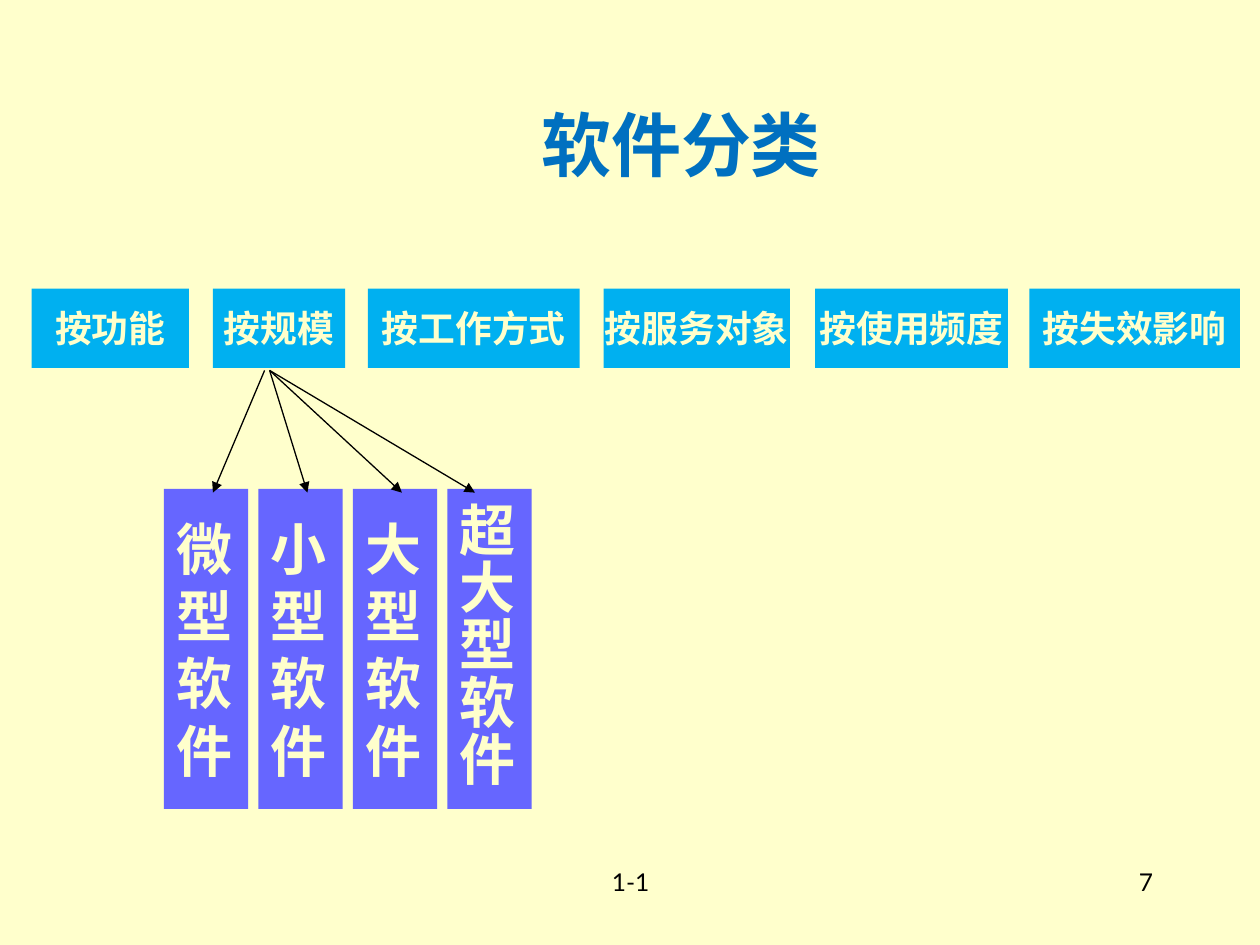
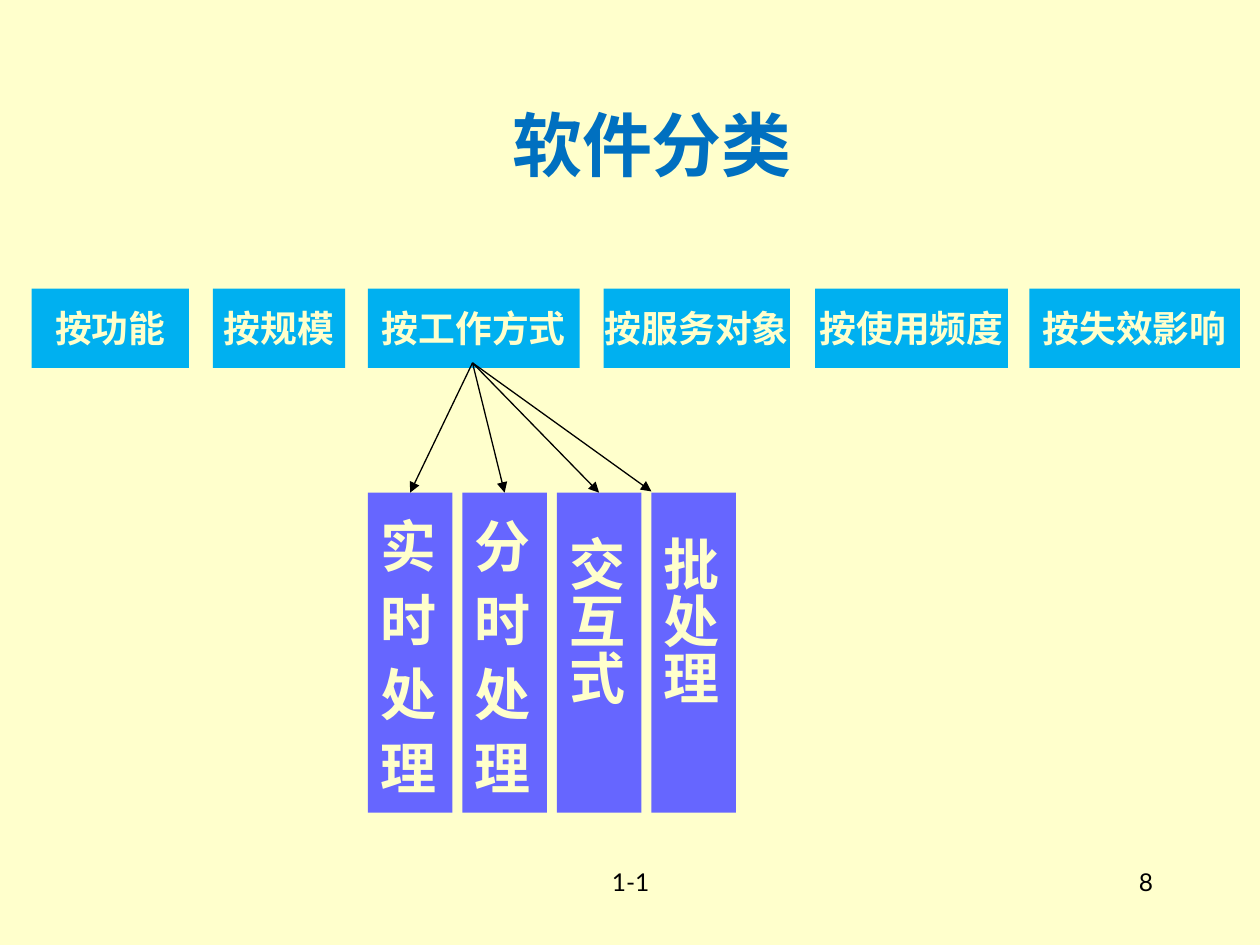
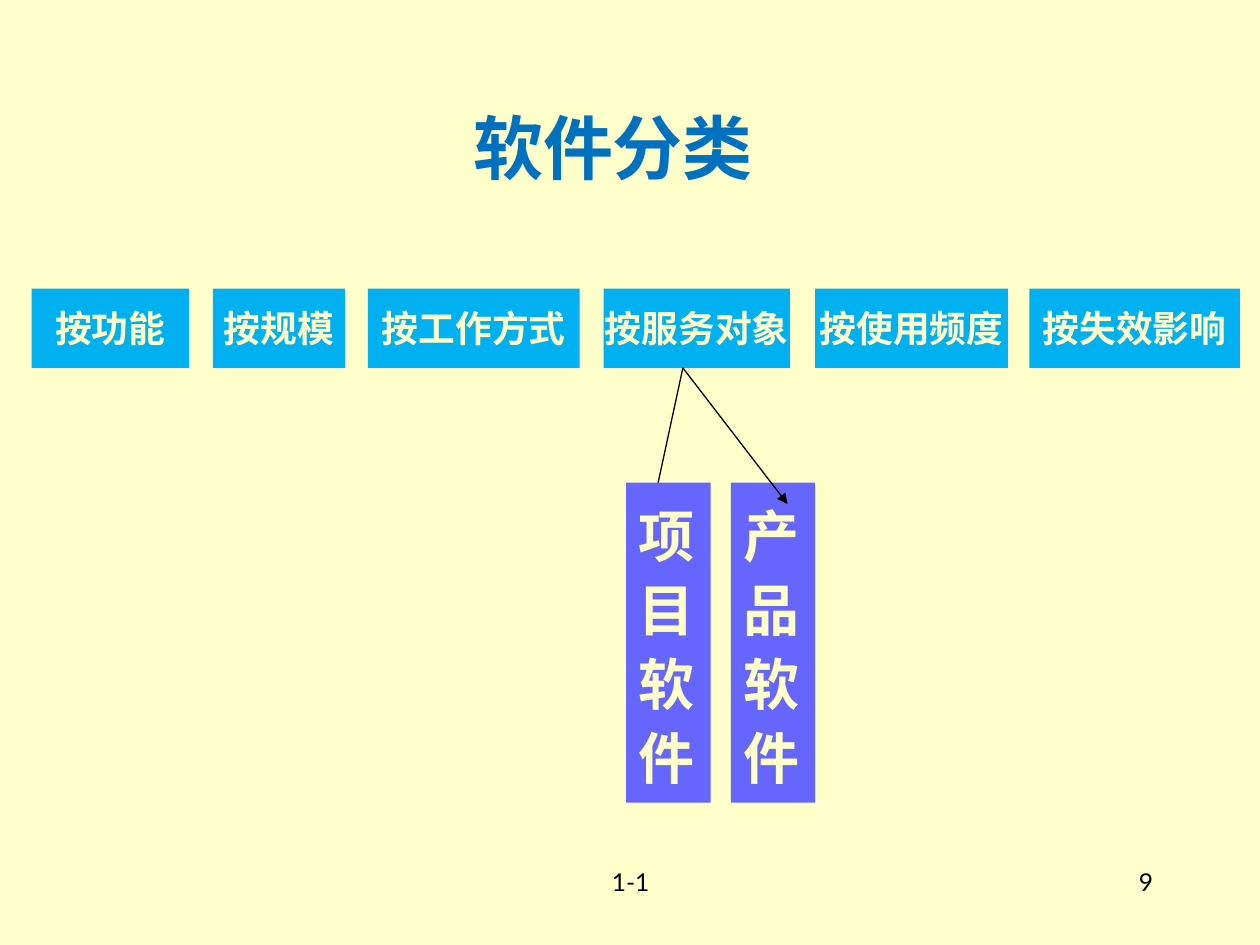
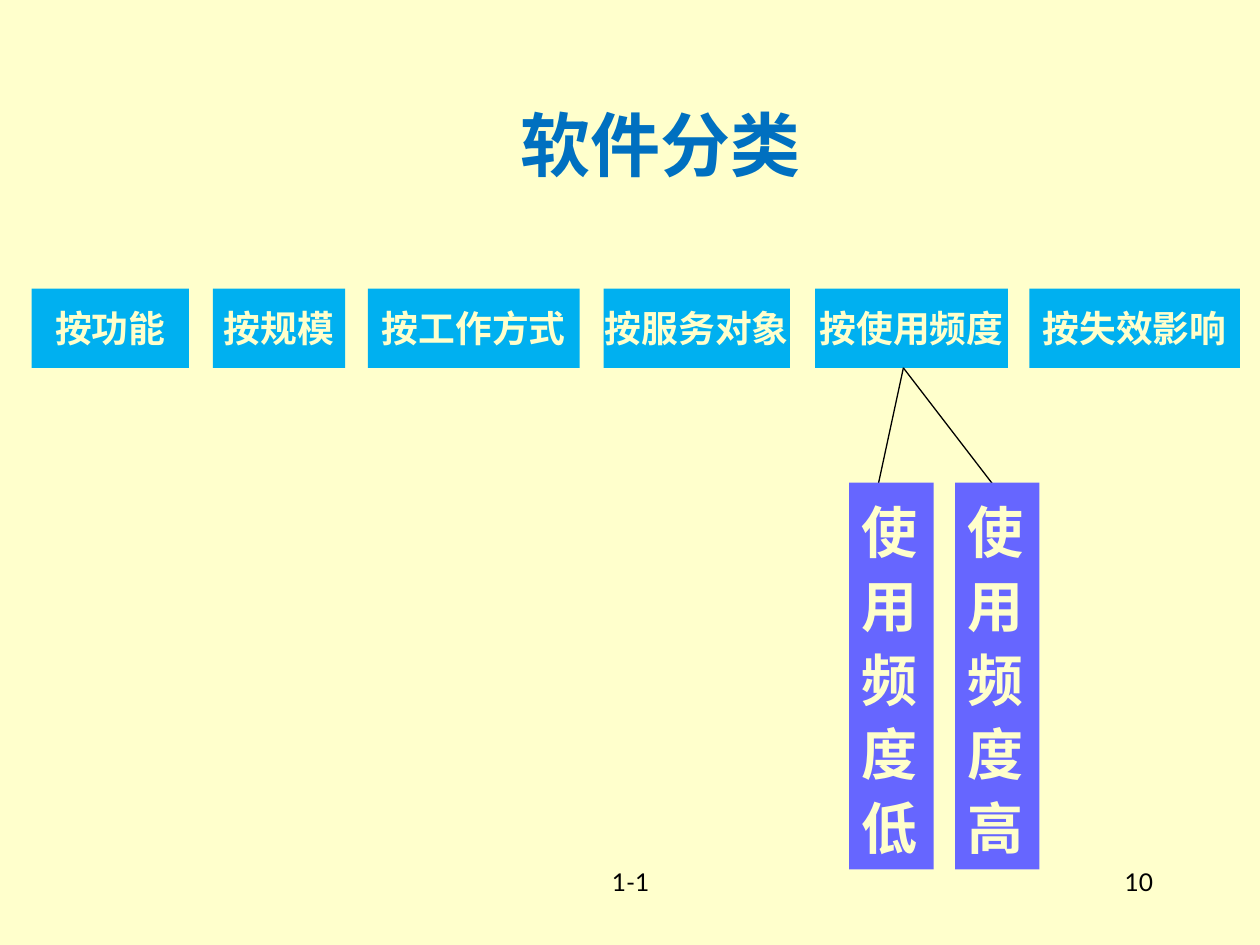
from lxml import etree
from pptx import Presentation
from pptx.dml.color import RGBColor
from pptx.enum.shapes import MSO_CONNECTOR, MSO_SHAPE
from pptx.enum.text import MSO_ANCHOR, PP_ALIGN
from pptx.oxml.ns import qn
from pptx.util import Inches, Pt

# Enum members
RECTANGLE = MSO_SHAPE.RECTANGLE
STRAIGHT = MSO_CONNECTOR.STRAIGHT
MIDDLE, TOP = MSO_ANCHOR.MIDDLE, MSO_ANCHOR.TOP
LEFT, CENTER, RIGHT = PP_ALIGN.LEFT, PP_ALIGN.CENTER, PP_ALIGN.RIGHT
TOP_SIDE = 0

# Colours
CREAM = RGBColor(0xFF, 0xFF, 0xCC)
SKY = RGBColor(0x00, 0xB0, 0xF0)
VIOLET = RGBColor(0x66, 0x66, 0xFF)
TITLE_BLUE = RGBColor(0x00, 0x70, 0xC0)
BLACK = RGBColor(0x00, 0x00, 0x00)

# Text formats
EAST_ASIAN_FONT = "Lato"
TITLE_FONT = {"name": "Noto Sans CJK SC", "size": Pt(40), "bold": True}
CATEGORY_FONT = {"name": "Noto Sans CJK SC", "size": Pt(21), "bold": True}
KIND_FONT = {"name": "Times New Roman", "size": Pt(32), "bold": True}
FOOTER_FONT = {"name": "Lato", "size": Pt(14), "bold": False}

presentation = Presentation()
presentation.slide_width, presentation.slide_height = Inches(10), Inches(7.5)
presentation.slide_master.background.fill.solid()
presentation.slide_master.background.fill.fore_color.rgb = CREAM

# Grid: 10 columns by 7.5 rows
COLUMN = presentation.slide_width / 10
ROW = presentation.slide_height / 7.5

CATEGORY_TOP, CATEGORY_HEIGHT = 2.29, 0.63
CATEGORIES = [  # text, left, width
    ("按功能", 0.25, 1.25),
    ("按规模", 1.69, 1.05),
    ("按工作方式", 2.92, 1.68),
    ("按服务对象", 4.79, 1.48),
    ("按使用频度", 6.47, 1.53),
    ("按失效影响", 8.17, 1.67),
]
KIND_WIDTH = 0.67
SHORT_KIND_INSET = 0.48  # lifts three-character kinds above the middle

# kinds: text and line spacing; in_front: how many kinds cover the arrows
SLIDES = [
    {
        "title": (2.69, 0.76, 5.43, 0.71),
        "left": 1.3, "top": 3.88, "height": 2.54, "pitch": 0.75,
        "kinds": [("微型软件", 1), ("小型软件", 1), ("大型软件", 1), ("超大型软件", 0.85)],
        "in_front": 0,
        "arrows": [(2.1, 2.94, 1.69, 3.91), (2.14, 2.94, 2.44, 3.91),
                   (2.14, 2.94, 3.19, 3.91), (2.14, 2.94, 3.77, 3.91)],
    },
    {
        "title": (3.11, 0.76, 4.13, 0.77),
        "left": 2.92, "top": 3.91, "height": 2.54, "pitch": 0.75,
        "kinds": [("实时处理", 1.1), ("分时处理", 1.1), ("交互式", 0.85), ("批处理", 0.85)],
        "in_front": 0,
        "arrows": [(3.75, 2.88, x, 3.9) for x in (3.25, 4, 4.75, 5.17)],
    },
    {
        "title": (2.8, 0.78, 4.13, 0.77),
        "left": 4.97, "top": 3.83, "height": 2.54, "pitch": 0.83,
        "kinds": [("项目软件", 1.1), ("产品软件", 1.1)],
        "in_front": 1,
        "arrows": [(5.42, 2.92, 5.17, 4.08), (5.42, 2.92, 6.25, 4)],
    },
    {
        "title": (2.48, 0.76, 5.52, 0.77),
        "left": 6.74, "top": 3.83, "height": 3.07, "pitch": 0.84,
        "kinds": [("使用频度低", 1.1), ("使用频度高", 1.1)],
        "in_front": 2,
        "arrows": [(7.17, 2.92, 6.92, 4.08), (7.17, 2.92, 8, 4)],
    },
]


def add_text(slide, box, lines, font, color, align, fill=None, spacing=None):
    """Add a text box, or a filled rectangle with centred text."""
    left, top, width, height = box
    place = [int(left * COLUMN), int(top * ROW), int(width * COLUMN), int(height * ROW)]
    if fill is None:
        shape = slide.shapes.add_textbox(*place)
    else:
        shape = slide.shapes.add_shape(RECTANGLE, *place)
        shape.shadow.inherit = False
        shape.fill.solid()
        shape.fill.fore_color.rgb = fill
        shape.line.fill.background()
    frame = shape.text_frame
    frame.word_wrap = fill is None
    frame.vertical_anchor = TOP if fill is None else MIDDLE
    for index, line in enumerate(lines):
        paragraph = frame.add_paragraph() if index else frame.paragraphs[0]
        paragraph.alignment = align
        paragraph.line_spacing = spacing
        run = paragraph.add_run()
        run.text = line
        for attribute, value in font.items():
            setattr(run.font, attribute, value)
        run.font.color.rgb = color
        east_asian = etree.SubElement(run._r.get_or_add_rPr(), qn("a:ea"))
        east_asian.set("typeface", EAST_ASIAN_FONT)
    return shape


def add_kinds(slide, content, indexes):
    """Add upright boxes, one character a line; return them by centre."""
    boxes = {}
    for index in indexes:
        text, spacing = content["kinds"][index]
        left = content["left"] + index * content["pitch"]
        box = (left, content["top"], KIND_WIDTH, content["height"])
        shape = add_text(slide, box, text, KIND_FONT, CREAM, LEFT, VIOLET, spacing)
        if len(text) == 3:
            shape.text_frame.margin_bottom = int(SHORT_KIND_INSET * ROW)
        boxes[left + KIND_WIDTH / 2] = shape
    return boxes


for number, content in enumerate(SLIDES, start=7):
    slide = presentation.slides.add_slide(presentation.slide_layouts[6])

    # Footer and slide number
    add_text(slide, (3.42, 6.83, 3.17, 0.5), ["1-1"], FOOTER_FONT, BLACK, CENTER)
    add_text(slide, (7.17, 6.83, 2.08, 0.5), [str(number)], FOOTER_FONT, BLACK, RIGHT)

    # Row of categories
    for text, left, width in CATEGORIES:
        box = (left, CATEGORY_TOP, width, CATEGORY_HEIGHT)
        add_text(slide, box, [text], CATEGORY_FONT, CREAM, CENTER, SKY)

    # Kinds behind the arrows
    in_front = content["in_front"]
    kinds = add_kinds(slide, content, range(in_front, len(content["kinds"])))

    # Arrows from the category to its kinds
    for start_x, start_y, end_x, end_y in content["arrows"]:
        arrow = slide.shapes.add_connector(
            STRAIGHT, int(start_x * COLUMN), int(start_y * ROW),
            int(end_x * COLUMN), int(end_y * ROW))
        arrow.line.color.rgb = BLACK
        arrow.line.width = Pt(0.75)
        etree.SubElement(arrow.line._get_or_add_ln(), qn("a:tailEnd")).set("type", "triangle")
        etree.SubElement(arrow._element.spPr, qn("a:effectLst"))
        for center, kind in kinds.items():
            if abs(center - end_x) < 0.02 and abs(content["top"] - end_y) < 0.02:
                arrow.end_connect(kind, TOP_SIDE)

    # Kinds in front of the arrows
    add_kinds(slide, content, range(in_front))

    # Title
    add_text(slide, content["title"], ["软件分类"], TITLE_FONT, TITLE_BLUE, CENTER)

presentation.save("out.pptx")
